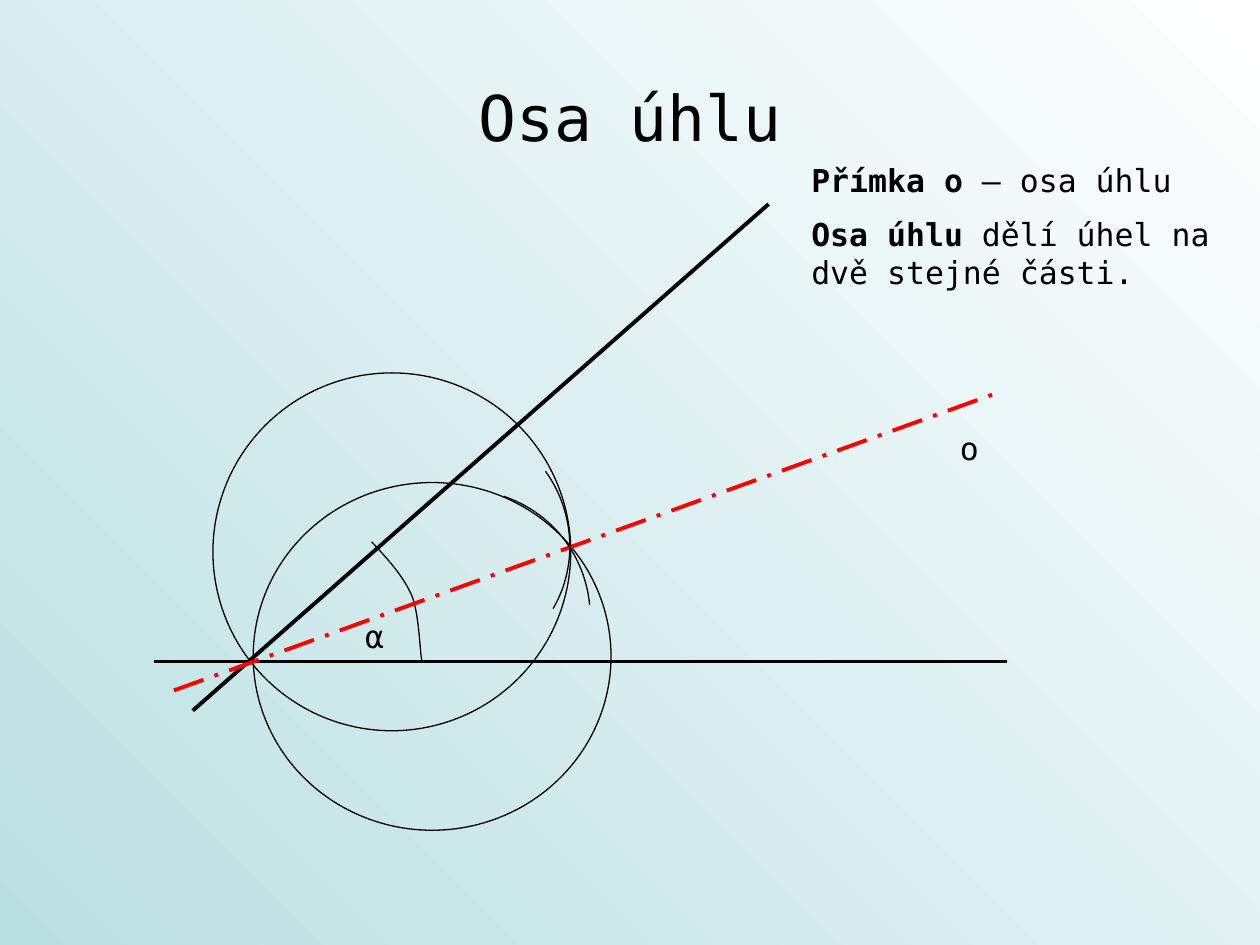
from dataclasses import dataclass
from typing import NamedTuple

from lxml.etree import SubElement
from pptx import Presentation
from pptx.dml.color import RGBColor
from pptx.enum.dml import MSO_LINE as Dash
from pptx.enum.shapes import MSO_CONNECTOR as Connector, MSO_SHAPE as Preset
from pptx.enum.text import MSO_ANCHOR as Anchor, MSO_AUTO_SIZE as AutoSize, PP_ALIGN as Align
from pptx.oxml.ns import qn
from pptx.util import Inches, Pt

COLUMNS, ROWS = 100, 75
SLIDE_WIDTH, SLIDE_HEIGHT = Inches(10), Inches(7.5)
CURVE_STEPS = 24


@dataclass(frozen=True)
class Theme:
    ink: RGBColor = RGBColor(0x00, 0x00, 0x00)
    bisector: RGBColor = RGBColor(0xFF, 0x00, 0x00)
    background: tuple = (RGBColor(0xBB, 0xE0, 0xE3), RGBColor(0xFF, 0xFF, 0xFF))
    font: str = "DejaVu Sans Mono"
    title: Pt = Pt(36)
    body: Pt = Pt(18)
    paragraph_gap: Pt = Pt(9)
    thick: Pt = Pt(2.25)
    thin: Pt = Pt(0.75)


class Point(NamedTuple):
    col: float
    row: float


class Box(NamedTuple):
    col: float
    row: float
    cols: float
    rows: float


class Ray(NamedTuple):
    start: Point
    end: Point
    color: RGBColor
    dash: Dash = Dash.SOLID


class Run(NamedTuple):
    text: str
    bold: bool = False


class Label(NamedTuple):
    box: Box
    paragraphs: list[list[Run]]


THEME = Theme()

CIRCLES = [Box(16.9, 29.6, 28.4, 28.4), Box(20.1, 38.3, 28.4, 27.6)]

ARMS = [
    Ray(Point(12.2, 52.5), Point(79.9, 52.5), THEME.ink),
    Ray(Point(15.3, 56.4), Point(61, 16.2), THEME.ink),
]
BISECTOR = Ray(Point(13.8, 54.8), Point(79.1, 31.2), THEME.bisector, Dash.LONG_DASH_DOT)

# Each curve is a chain of cubic Béziers: a start, then three points per piece.
ANGLE_ARC = [Point(29.5, 43), Point(30.8, 44.4), Point(32, 45.7), Point(32.7, 47.3),
             Point(33.3, 48.9), Point(33.3, 51.6), Point(33.5, 52.5)]
COMPASS_ARCS = [
    [Point(40, 39.4), Point(43.8, 40.7), Point(46.4, 44), Point(46.8, 48)],
    [Point(43.3, 37.4), Point(45.6, 40.6), Point(45.9, 44.9), Point(43.9, 48.3)],
]

LABELS = [
    Label(Box(28, 48.5, 6.3, 4), [[Run("α")]]),
    Label(Box(75.2, 33.6, 11, 4), [[Run("o")]]),
    Label(Box(63.4, 12.3, 33.9, 11.5), [
        [Run("Přímka o", True), Run(" – osa úhlu")],
        [Run("Osa úhlu", True), Run(" dělí úhel na dvě stejné části.")],
    ]),
]


def x(cols: float) -> int:
    return round(SLIDE_WIDTH * cols / COLUMNS)


def y(rows: float) -> int:
    return round(SLIDE_HEIGHT * rows / ROWS)


def place(box: Box) -> tuple[int, int, int, int]:
    return x(box.col), y(box.row), x(box.cols), y(box.rows)


def paint_background(slide) -> None:
    fill = slide.background.fill
    fill.gradient()
    fill.gradient_angle = 45
    for stop, color in zip(fill.gradient_stops, THEME.background):
        stop.color.rgb = color


def outline(shape) -> None:
    """Leave only a thin ink line on the shape."""
    shape.shadow.inherit = False
    shape.fill.background()
    shape.line.color.rgb = THEME.ink
    shape.line.width = THEME.thin


def draw_ray(slide, ray: Ray) -> None:
    connector = slide.shapes.add_connector(
        Connector.STRAIGHT, x(ray.start.col), y(ray.start.row), x(ray.end.col), y(ray.end.row))
    connector.line.color.rgb = ray.color
    connector.line.width = THEME.thick
    connector.line.dash_style = ray.dash
    SubElement(connector._element.spPr, qn("a:effectLst"))


def draw_circle(slide, box: Box) -> None:
    outline(slide.shapes.add_shape(Preset.OVAL, *place(box)))


def bezier(a: float, b: float, c: float, d: float, t: float) -> float:
    s = 1 - t
    return s**3 * a + 3 * s * s * t * b + 3 * s * t * t * c + t**3 * d


def draw_curve(slide, points: list[Point]) -> None:
    vertices = []
    for first in range(0, len(points) - 1, 3):
        cols, rows = zip(*points[first:first + 4])
        for step in range(1, CURVE_STEPS + 1):
            t = step / CURVE_STEPS
            vertices.append((x(bezier(*cols, t)), y(bezier(*rows, t))))
    builder = slide.shapes.build_freeform(x(points[0].col), y(points[0].row))
    builder.add_line_segments(vertices, close=False)
    outline(builder.convert_to_shape())


def set_font(paragraph, size: Pt) -> None:
    paragraph.font.name = THEME.font
    paragraph.font.size = size
    paragraph.font.color.rgb = THEME.ink


def write_title(slide, text: str) -> None:
    frame = slide.shapes.add_textbox(*place(Box(5, 3, 90, 12.5))).text_frame
    frame.word_wrap = True
    frame.vertical_anchor = Anchor.MIDDLE
    heading = frame.paragraphs[0]
    heading.text = text
    heading.alignment = Align.CENTER
    set_font(heading, THEME.title)


def write_label(slide, label: Label) -> None:
    frame = slide.shapes.add_textbox(*place(label.box)).text_frame
    frame.word_wrap = True
    frame.auto_size = AutoSize.SHAPE_TO_FIT_TEXT
    for index, runs in enumerate(label.paragraphs):
        paragraph = frame.add_paragraph() if index else frame.paragraphs[0]
        if index:
            paragraph.space_before = THEME.paragraph_gap
        set_font(paragraph, THEME.body)
        for part in runs:
            run = paragraph.add_run()
            run.text = part.text
            run.font.bold = part.bold


def main() -> None:
    deck = Presentation()
    deck.slide_width, deck.slide_height = SLIDE_WIDTH, SLIDE_HEIGHT
    slide = deck.slides.add_slide(deck.slide_layouts[6])
    paint_background(slide)
    write_title(slide, "Osa úhlu")
    for arm in ARMS:
        draw_ray(slide, arm)
    draw_curve(slide, ANGLE_ARC)
    for circle in CIRCLES:
        draw_circle(slide, circle)
    draw_ray(slide, BISECTOR)
    for arc in COMPASS_ARCS:
        draw_curve(slide, arc)
    for label in LABELS:
        write_label(slide, label)
    deck.save("out.pptx")


if __name__ == "__main__":
    main()
